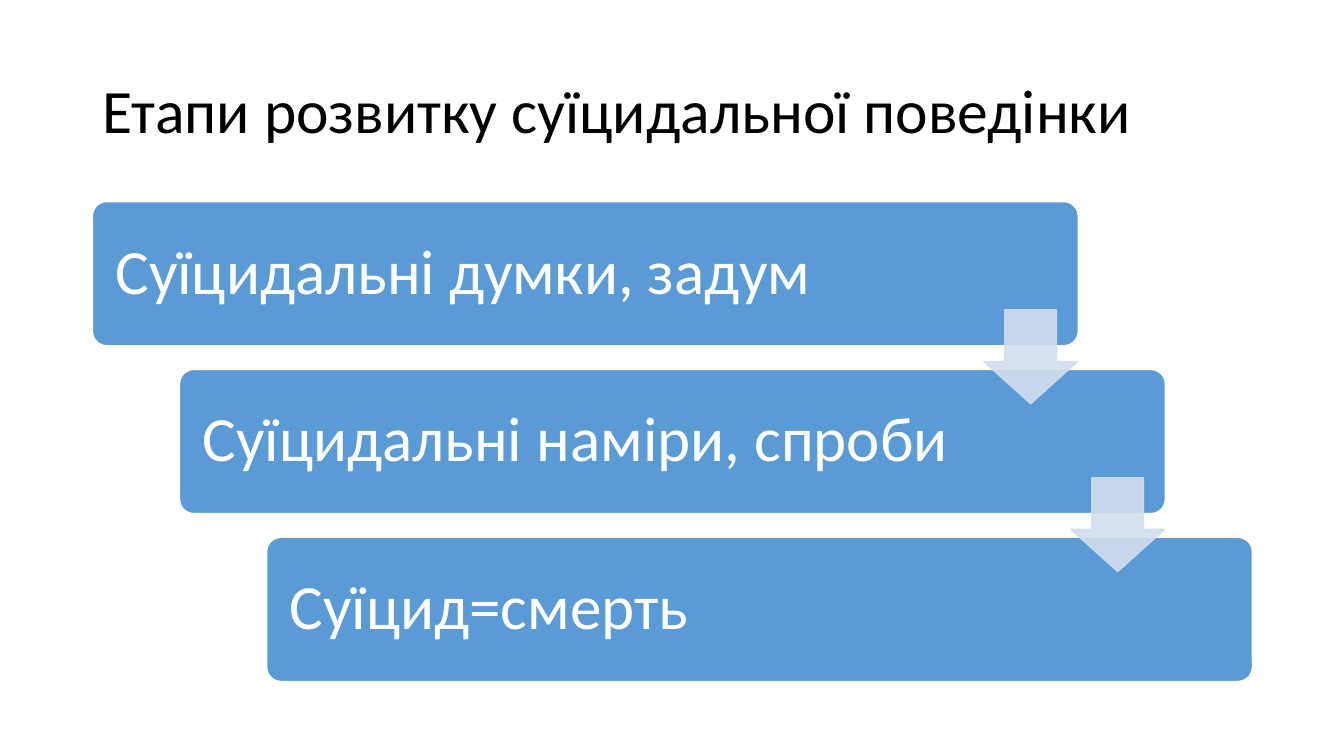
from lxml import etree
from pptx import Presentation
from pptx.dml.color import RGBColor
from pptx.enum.shapes import MSO_SHAPE
from pptx.enum.text import MSO_ANCHOR, PP_ALIGN
from pptx.oxml.ns import qn
from pptx.util import Pt

BOX, ARROW = MSO_SHAPE.ROUNDED_RECTANGLE, MSO_SHAPE.DOWN_ARROW
MIDDLE, LEFT = MSO_ANCHOR.MIDDLE, PP_ALIGN.LEFT

# Content
TITLE = "Етапи розвитку суїцидальної поведінки"
STAGES = ["Суїцидальні думки, задум", "Суїцидальні наміри, спроби", "Суїцид=смерть"]

COLORS = {"title": "000000", "box": "5B9BD5", "white": "FFFFFF", "arrow": "D2DEEF"}
FONT = "Calibri"

# Staircase layout, in points
X, Y = 66, 144
STEP_X, STEP_Y = 62.2, 119.9
BOX_W, BOX_H = 704.2, 103
ARROW_X, ARROW_Y, ARROW_D = 702.7, 221.4, 67


def rgb(name):
    return RGBColor.from_string(COLORS[name])


def write(shape, text, size, color):
    frame = shape.text_frame
    frame.word_wrap = True
    frame.vertical_anchor = MIDDLE
    frame.text = text
    par = frame.paragraphs[0]
    par.alignment = LEFT
    par.line_spacing = 0.9
    font = par.runs[0].font
    font.name, font.size = FONT, Pt(size)
    font.color.rgb = rgb(color)


def draw(kind, x, y, w, h, fill, line, adjust):
    shape = slide.shapes.add_shape(kind, Pt(x), Pt(y), Pt(w), Pt(h))
    shape.shadow.inherit = False
    shape.fill.solid()
    shape.fill.fore_color.rgb = rgb(fill)
    shape.line.color.rgb = rgb(line)
    shape.line.width = Pt(1)
    for i, value in enumerate(adjust):
        shape.adjustments[i] = value
    return shape


def fade(shape, percent):
    for color in shape._element.spPr.iter(qn("a:srgbClr")):
        etree.SubElement(color, qn("a:alpha")).set("val", str(percent * 1000))


deck = Presentation()
deck.slide_width, deck.slide_height = Pt(960), Pt(540)
slide = deck.slides.add_slide(deck.slide_layouts[6])

# Title
title = slide.shapes.add_textbox(Pt(X), Pt(28.8), Pt(828), Pt(104.4))
write(title, TITLE, 44, "title")

# Stage boxes
for i, stage in enumerate(STAGES):
    box = draw(BOX, X + i * STEP_X, Y + i * STEP_Y, BOX_W, BOX_H,
               "box", "white", [0.1])
    write(box, stage, 45, "white")
    box.text_frame.margin_left = Pt(13.5)

# Arrows from each stage to the next
for i in range(len(STAGES) - 1):
    arrow = draw(ARROW, ARROW_X + i * STEP_X, ARROW_Y + i * STEP_Y,
                 ARROW_D, ARROW_D, "arrow", "arrow", [0.55, 0.45])
    fade(arrow, 90)

deck.save("out.pptx")
